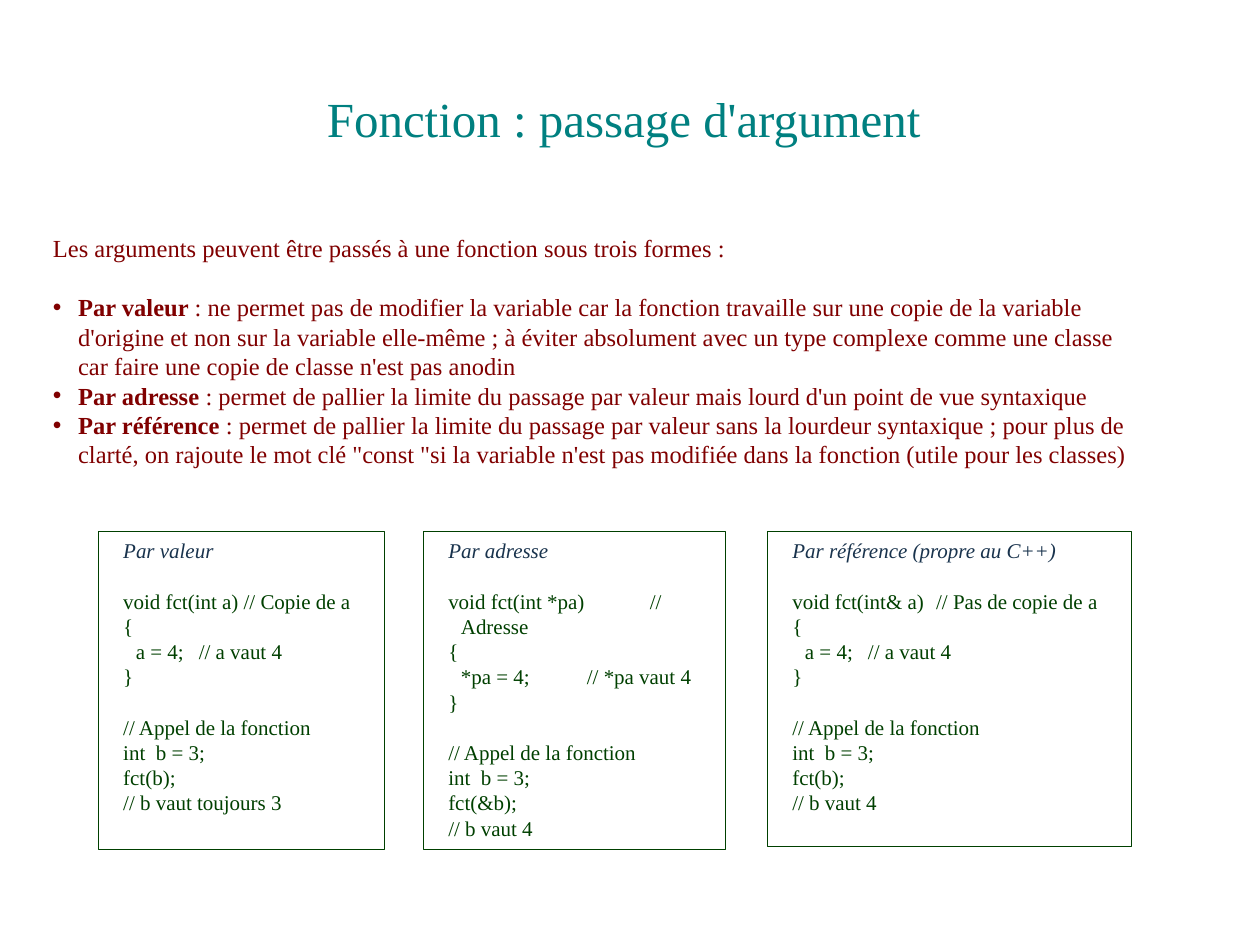
from pptx import Presentation
from pptx.dml.color import RGBColor
from pptx.enum.shapes import MSO_SHAPE as Shape
from pptx.enum.text import MSO_ANCHOR as Anchor, PP_ALIGN as Align
from pptx.oxml.ns import qn
from pptx.util import Inches, Pt
from lxml.etree import SubElement

INTRO = "Les arguments peuvent être passés à une fonction sous trois formes :"
FORMS = [
    ("Par valeur ", ": ne permet pas de modifier la variable car la fonction travaille "
     "sur une copie de la variable d'origine et non sur la variable elle-même ; "
     "à éviter absolument avec un type complexe comme une classe car faire une "
     "copie de classe n'est pas anodin"),
    ("Par adresse ", ": permet de pallier la limite du passage par valeur mais lourd "
     "d'un point de vue syntaxique"),
    ("Par référence ", ": permet de pallier la limite du passage par valeur sans la "
     "lourdeur syntaxique ; pour plus de clarté, on rajoute le mot clé \"const \"si "
     "la variable n'est pas modifiée dans la fonction (utile pour les classes)"),
]
# left, width, height, tab stops, heading, signature, assignment, call, result
CODES = [
    (0.78, 2.27, 2.52, [], "Par valeur", "void fct(int a) // Copie de a",
     "a = 4;\t// a vaut 4", "fct(b);", "// b vaut toujours 3"),
    (3.36, 2.4, 2.52, [1.08, 1.38], "Par adresse", "void fct(int *pa) \t// Adresse",
     "*pa = 4;\t// *pa vaut 4", "fct(&b);", "// b vaut 4"),
    (6.09, 2.89, 2.5, [1.27], "Par référence (propre au C++)",
     "void fct(int& a)\t // Pas de copie de a",
     "a = 4;\t// a vaut 4", "fct(b);", "// b vaut 4"),
]


def color(code):
    return RGBColor.from_string(code)


class Deck:
    font = "Times New Roman"
    teal, red, green, navy = "008080", "800000", "004000", "19334D"

    def __init__(self):
        self.prs = Presentation()
        self.prs.slide_width, self.prs.slide_height = Inches(10), Inches(7.5)
        self.slide = self.prs.slides.add_slide(self.prs.slide_layouts[1])

    def place(self, shape, left, top, width, height):
        shape.left, shape.top = Inches(left), Inches(top)
        shape.width, shape.height = Inches(width), Inches(height)

    def run(self, par, text, size, tint, bold=False, italic=False):
        run = par.add_run()
        run.text = text
        font = run.font
        font.name, font.size, font.bold, font.italic = self.font, Pt(size), bold, italic
        font.color.rgb = color(tint)

    def line(self, frame, margin, hang, gap=0, bullet=None, tabs=(), level=0):
        """Start a paragraph with a hanging indent and return it."""
        par = frame.paragraphs[0]
        if par.runs:
            par = frame.add_paragraph()
        par.alignment, par.level = Align.LEFT, level
        par.space_before, par.space_after = Pt(gap), Pt(0)
        props = par._p.get_or_add_pPr()
        props.set("marL", str(Inches(margin)))
        props.set("indent", str(-Inches(hang)))
        if bullet:
            SubElement(props, qn("a:buChar")).set("char", bullet)
        else:
            SubElement(props, qn("a:buNone"))
        if tabs:
            stops = SubElement(props, qn("a:tabLst"))
            for pos in tabs:
                stop = SubElement(stops, qn("a:tab"))
                stop.set("pos", str(Inches(pos)))
                stop.set("algn", "l")
        return par

    def title(self, text):
        shape = self.slide.shapes.title
        self.place(shape, 0.7, 0.31, 8.5, 1.25)
        frame = shape.text_frame
        frame.vertical_anchor = Anchor.MIDDLE
        par = frame.paragraphs[0]
        par.alignment = Align.CENTER
        self.run(par, text, 28, self.teal)

    def body(self, intro, forms):
        shape = self.slide.placeholders[1]
        self.place(shape, 0.23, 1.8, 8.83, 1.99)
        frame = shape.text_frame
        self.run(self.line(frame, 0.29, 0.2), intro, 14, self.red)
        for num, (name, text) in enumerate(forms):
            par = self.line(frame, 0.29, 0.2, 0 if num else 17, "•", level=1)
            self.run(par, name, 14, self.red, bold=True)
            self.run(par, text, 14, self.red)

    def code(self, left, width, height, tabs, head, sign, assign, call, result):
        box = self.slide.shapes.add_shape(
            Shape.RECTANGLE, Inches(left), Inches(4.22), Inches(width), Inches(height))
        box.shadow.inherit = False
        box.fill.background()
        box.line.color.rgb = color(self.green)
        box.line.width = Pt(0.75)
        frame = box.text_frame
        frame.word_wrap, frame.vertical_anchor = True, Anchor.TOP
        self.run(self.line(frame, 0.2, 0.1, tabs=tabs), head, 12, self.navy, italic=True)
        parts = [[sign, "{", "\t" + assign, "}"],
                 ["// Appel de la fonction", "int  b = 3;", call, result]]
        for part in parts:
            for num, text in enumerate(part):
                par = self.line(frame, 0.2, 0.1, 0 if num else 14.4, tabs=tabs, level=1)
                self.run(par, text, 12, self.green)


def main():
    deck = Deck()
    deck.title("Fonction : passage d'argument")
    deck.body(INTRO, FORMS)
    for code in CODES:
        deck.code(*code)
    deck.prs.save("out.pptx")


if __name__ == "__main__":
    main()
